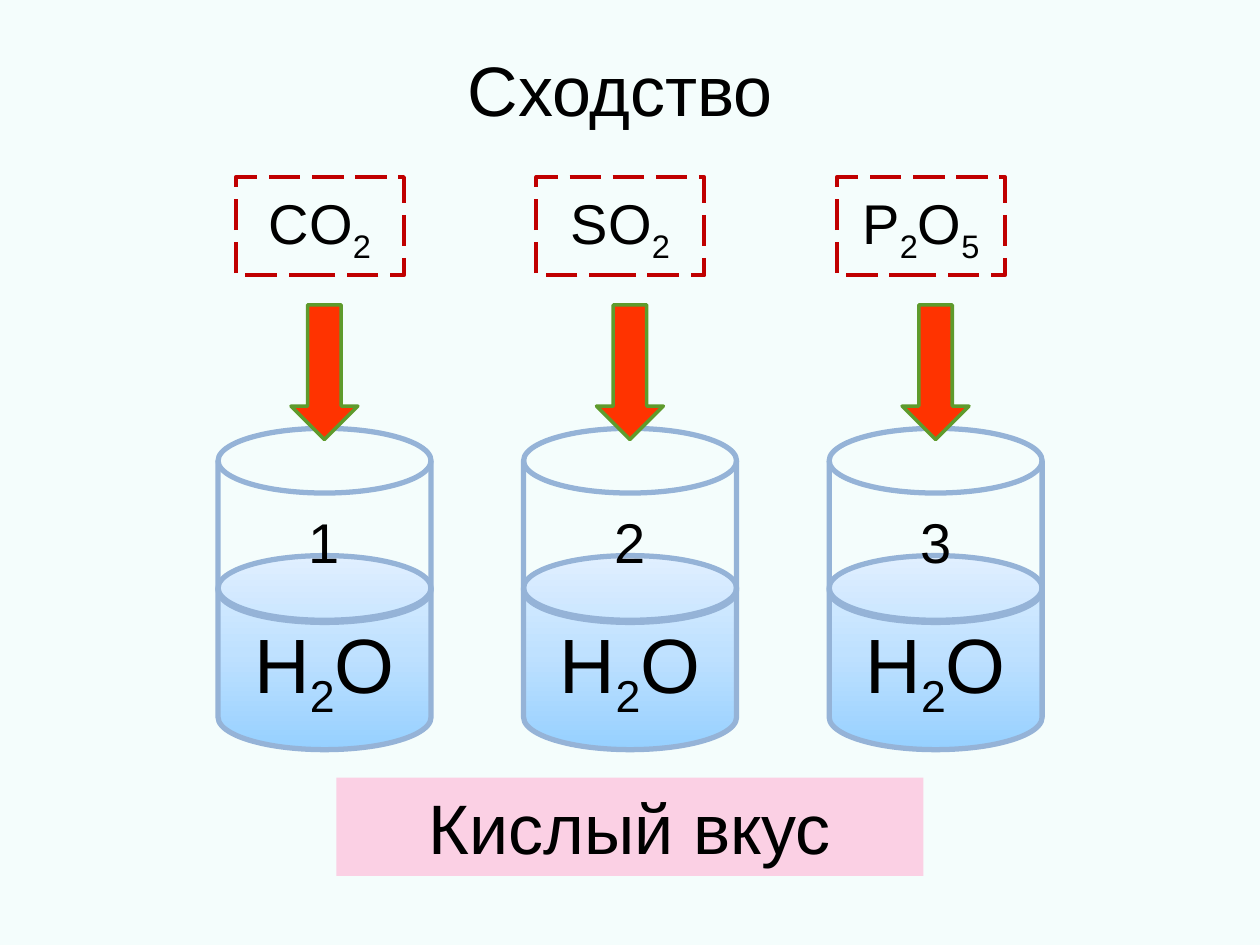
from copy import deepcopy
from dataclasses import dataclass

from pptx import Presentation
from pptx.dml.color import RGBColor
from pptx.enum.dml import MSO_LINE
from pptx.enum.shapes import MSO_SHAPE
from pptx.enum.text import MSO_ANCHOR, PP_ALIGN
from pptx.oxml.ns import qn
from pptx.util import Pt

RECTANGLE = MSO_SHAPE.RECTANGLE
DISK = MSO_SHAPE.FLOWCHART_MAGNETIC_DISK
DOWN_ARROW = MSO_SHAPE.DOWN_ARROW
LONG_DASH = MSO_LINE.LONG_DASH
MIDDLE = MSO_ANCHOR.MIDDLE
CENTER = PP_ALIGN.CENTER

BLACK = RGBColor(0x00, 0x00, 0x00)
BACKGROUND = RGBColor(0xF4, 0xFD, 0xFC)
PINK = RGBColor(0xFB, 0xD0, 0xE4)
GLASS_BLUE = RGBColor(0x95, 0xB3, 0xD7)
ARROW_RED = RGBColor(0xFF, 0x33, 0x00)
ARROW_GREEN = RGBColor(0x5E, 0x9B, 0x2C)
DASH_RED = RGBColor(0xC0, 0x00, 0x00)
WATER_STOPS = (
    (0, RGBColor(0x96, 0xD0, 0xFF)),
    (0.5, RGBColor(0xBF, 0xE1, 0xFF)),
    (1, RGBColor(0xE0, 0xEF, 0xFF)),
)

FONT = "Arial"
WATER = "H_2O"  # an underscore lowers the character after it


@dataclass(frozen=True)
class Frame:
    left: float
    top: float
    width: float
    height: float

    def shifted(self, distance: float) -> "Frame":
        return Frame(self.left + distance, self.top, self.width, self.height)

    def lengths(self) -> tuple:
        return Pt(self.left), Pt(self.top), Pt(self.width), Pt(self.height)


OXIDES = ("СO_2", "SO_2", "P_2O_5")

# First column; the others follow at a constant step
COLUMN_STEP = 174.6
OXIDE_STEP = 171.7
WATER_FRAME = Frame(124.6, 317.5, 121.7, 110.9)
GLASS_FRAME = Frame(124.6, 244.8, 121.7, 110.9)
ARROW_FRAME = Frame(166.3, 174.2, 38.2, 77)
OXIDE_FRAME = Frame(134.8, 101.2, 96, 56.2)
TITLE_FRAME = Frame(36, 16.6, 648, 67.7)
TASTE_FRAME = Frame(192.2, 444.4, 335.5, 56.2)


def write_text(shape, text: str, *, size: float, wrap: bool = True) -> None:
    """Write centred text; each underscore makes the next character a subscript."""
    frame = shape.text_frame
    frame.word_wrap = wrap
    frame.vertical_anchor = MIDDLE
    para = frame.paragraphs[0]
    para.alignment = CENTER
    first, *rest = text.split("_")
    pieces = [(first, False)]
    for piece in rest:
        pieces += [(piece[0], True), (piece[1:], False)]
    for content, lowered in pieces:
        if not content:
            continue
        span = para.add_run()
        span.text = content
        span.font.name = FONT
        span.font.size = Pt(size)
        span.font.color.rgb = BLACK
        if lowered:
            span.font._element.set("baseline", "-25000")


def add_figure(page, kind, frame: Frame, *, fill=None, line=None,
               width: float = 0, dash=None):
    shape = page.shapes.add_shape(kind, *frame.lengths())
    shape.shadow.inherit = False
    if fill is None:
        shape.fill.background()
    else:
        shape.fill.solid()
        shape.fill.fore_color.rgb = fill
    if line is None:
        shape.line.fill.background()
    else:
        shape.line.color.rgb = line
        shape.line.width = Pt(width)
        if dash is not None:
            shape.line.dash_style = dash
    return shape


def fill_with_water(shape) -> None:
    shape.fill.gradient()
    shape.fill.gradient_angle = 90
    stop_list = shape._element.spPr.find(qn("a:gradFill")).find(qn("a:gsLst"))
    stop_list.insert(1, deepcopy(stop_list[0]))
    for stop, (position, color) in zip(shape.fill.gradient_stops, WATER_STOPS):
        stop.position = position
        stop.color.rgb = color


def add_beaker(page, number: int, shift: float) -> None:
    water = add_figure(page, DISK, WATER_FRAME.shifted(shift), line=GLASS_BLUE, width=3)
    fill_with_water(water)
    write_text(water, WATER, size=44, wrap=False)
    glass = add_figure(page, DISK, GLASS_FRAME.shifted(shift), line=GLASS_BLUE, width=3)
    write_text(glass, str(number), size=32, wrap=False)


def main() -> None:
    deck = Presentation()
    deck.slide_width, deck.slide_height = Pt(720), Pt(540)
    page = deck.slides.add_slide(deck.slide_layouts[6])
    page.background.fill.solid()
    page.background.fill.fore_color.rgb = BACKGROUND

    # Conclusion and title
    taste = add_figure(page, RECTANGLE, TASTE_FRAME, fill=PINK)
    write_text(taste, "Кислый вкус", size=40)
    title = page.shapes.add_textbox(*TITLE_FRAME.lengths())
    write_text(title, "Сходство ", size=40)

    # Beakers, arrows and oxides
    for index, oxide in enumerate(OXIDES):
        shift = index * COLUMN_STEP
        add_beaker(page, index + 1, shift)
        add_figure(page, DOWN_ARROW, ARROW_FRAME.shifted(shift),
                   fill=ARROW_RED, line=ARROW_GREEN, width=2)
        label = add_figure(page, RECTANGLE, OXIDE_FRAME.shifted(index * OXIDE_STEP),
                           line=DASH_RED, width=2.25, dash=LONG_DASH)
        write_text(label, oxide, size=32)

    deck.save("out.pptx")


if __name__ == "__main__":
    main()
